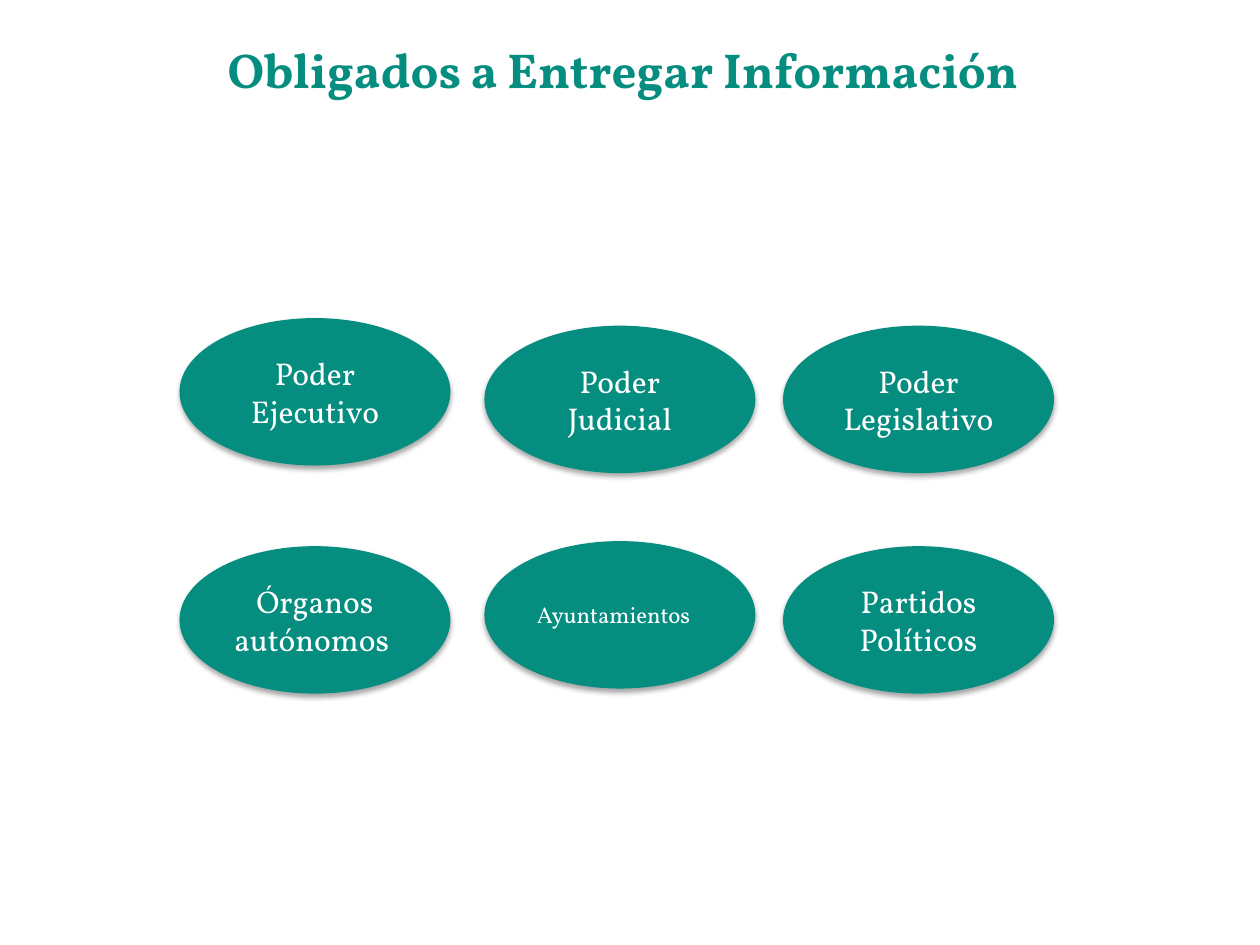
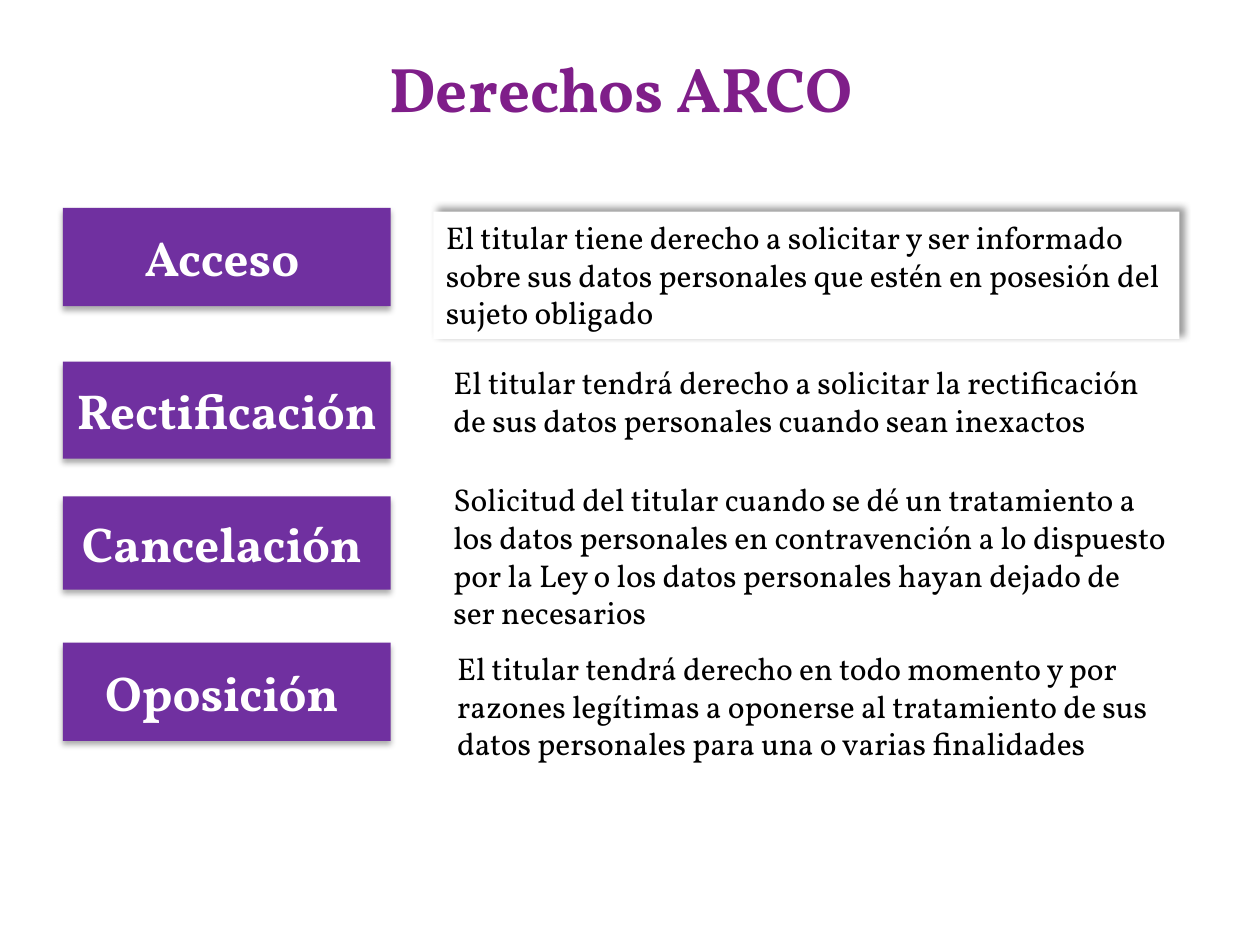
from dataclasses import dataclass

from lxml.etree import SubElement
from pptx import Presentation
from pptx.dml.color import RGBColor as Color
from pptx.enum.shapes import MSO_SHAPE as ShapeKind
from pptx.enum.text import MSO_ANCHOR as Anchor, MSO_AUTO_SIZE as AutoSize, PP_ALIGN as Align
from pptx.oxml.ns import qn
from pptx.util import Inches, Pt


@dataclass(frozen=True)
class Shadow:
    opacity: int
    blur: float
    distance: float
    angle: int


@dataclass(frozen=True)
class Theme:
    font: str = "Vollkorn"
    teal: str = "058D80"
    purple: str = "7030A0"
    plum: str = "7F1E89"
    white: str = "FFFFFF"
    black: str = "000000"
    title_size: int = 36
    heading_size: int = 28
    body_size: int = 18
    small_size: int = 13
    oval_shadow: Shadow = Shadow(35, 3.1, 1.8, 90)
    label_shadow: Shadow = Shadow(32, 3.5, 2.2, 90)
    panel_shadow: Shadow = Shadow(40, 4, 3, 315)


THEME = Theme()
TITLE_ONLY = 5

OVAL_SIZE = (2.14, 1.16)
OVAL_COLUMNS = (1.43, 3.85, 6.22)
OVAL_ROWS = (
    (("Poder Ejecutivo", 2.53), ("Poder Judicial", 2.59), ("Poder Legislativo", 2.59)),
    (("Órganos autónomos ", 4.34), ("Ayuntamientos", 4.3), ("Partidos Políticos", 4.34)),
)

LABEL_LEFT, LABEL_WIDTH = 0.5, 2.6
RIGHTS = (
    ("Acceso ", 1.65, 0.78, (3.44, 1.68, 5.92, 1.01),
     "El titular tiene derecho a solicitar y ser informado sobre sus datos personales "
     "que estén en posesión del sujeto obligado"),
    ("Rectificación ", 2.87, 0.77, (3.5, 2.83, 5.69, 0.71),
     "El titular tendrá derecho a solicitar la rectificación de sus datos personales "
     "cuando sean inexactos"),
    ("Cancelación ", 3.94, 0.74, (3.5, 3.76, 5.86, 1.31),
     "Solicitud del titular cuando se dé un tratamiento a los datos personales en "
     "contravención a lo dispuesto por la Ley o los datos personales hayan dejado de "
     "ser necesarios"),
    ("Oposición ", 5.1, 0.78, (3.53, 5.1, 5.74, 1.01),
     "El titular tendrá derecho en todo momento y por razones legítimas a oponerse al "
     "tratamiento de sus datos personales para una o varias finalidades"),
)


def to_inches(box):
    return [Inches(length) for length in box]


def write_text(shape, text, size, color, bold=False, align=Align.CENTER, anchor=Anchor.MIDDLE):
    frame = shape.text_frame
    frame.word_wrap = True
    frame.auto_size = AutoSize.NONE
    frame.vertical_anchor = anchor
    paragraph = frame.paragraphs[0]
    paragraph.alignment = align
    run = paragraph.add_run()
    run.text = text
    font = run.font
    font.name = THEME.font
    font.size = Pt(size)
    font.bold = bold
    font.color.rgb = Color.from_string(color)


def paint(shape, color):
    shape.fill.solid()
    shape.fill.fore_color.rgb = Color.from_string(color)


def cast_shadow(shape, shadow):
    shape.shadow.inherit = False
    effects = shape._element.spPr.find(qn("a:effectLst"))
    outer = SubElement(effects, qn("a:outerShdw"), blurRad=str(Pt(shadow.blur)),
                       dist=str(Pt(shadow.distance)), dir=str(shadow.angle * 60000),
                       rotWithShape="0")
    tint = SubElement(outer, qn("a:srgbClr"), val=THEME.black)
    SubElement(tint, qn("a:alpha"), val=str(shadow.opacity * 1000))


def add_titled_slide(presentation, title, box, size, color):
    slide = presentation.slides.add_slide(presentation.slide_layouts[TITLE_ONLY])
    shape = slide.shapes.title
    shape.left, shape.top, shape.width, shape.height = to_inches(box)
    write_text(shape, title, size, color, bold=True, anchor=Anchor.TOP)
    return slide


def add_filled_shape(slide, kind, box, color, shadow):
    shape = slide.shapes.add_shape(kind, *to_inches(box))
    paint(shape, color)
    shape.line.fill.background()
    cast_shadow(shape, shadow)
    return shape


def add_oval(slide, text, left, top):
    oval = add_filled_shape(slide, ShapeKind.OVAL, (left, top, *OVAL_SIZE),
                            THEME.teal, THEME.oval_shadow)
    oval.line.color.rgb = Color.from_string(THEME.teal)
    oval.line.width = Pt(0.75)
    single_word = " " not in text
    write_text(oval, text, THEME.small_size if single_word else THEME.body_size, THEME.white,
               align=Align.JUSTIFY if single_word else Align.CENTER)


def add_label(slide, text, top, height):
    label = add_filled_shape(slide, ShapeKind.RECTANGLE, (LABEL_LEFT, top, LABEL_WIDTH, height),
                             THEME.purple, THEME.label_shadow)
    write_text(label, text, THEME.heading_size, THEME.white, bold=True)


def add_description(slide, text, box, raised):
    if raised:
        shape = add_filled_shape(slide, ShapeKind.RECTANGLE, box, THEME.white, THEME.panel_shadow)
    else:
        shape = slide.shapes.add_textbox(*to_inches(box))
    write_text(shape, text, THEME.body_size, THEME.black, align=Align.LEFT, anchor=Anchor.TOP)


def build_obligated_parties(presentation):
    slide = add_titled_slide(presentation, "Obligados a Entregar Información ",
                             (1.09, 0.26, 7.78, 0.57), THEME.heading_size, THEME.teal)
    for row in OVAL_ROWS:
        for left, (text, top) in zip(OVAL_COLUMNS, row):
            add_oval(slide, text, left, top)


def build_arco_rights(presentation):
    slide = add_titled_slide(presentation, "Derechos ARCO", (0.5, 0.34, 8.86, 0.71),
                             THEME.title_size, THEME.plum)
    for index, (name, top, height, box, description) in enumerate(RIGHTS):
        add_label(slide, name, top, height)
        add_description(slide, description, box, raised=index == 0)


def main():
    presentation = Presentation()
    presentation.slide_width, presentation.slide_height = Inches(10), Inches(7.5)
    build_obligated_parties(presentation)
    build_arco_rights(presentation)
    presentation.save("out.pptx")


if __name__ == "__main__":
    main()
